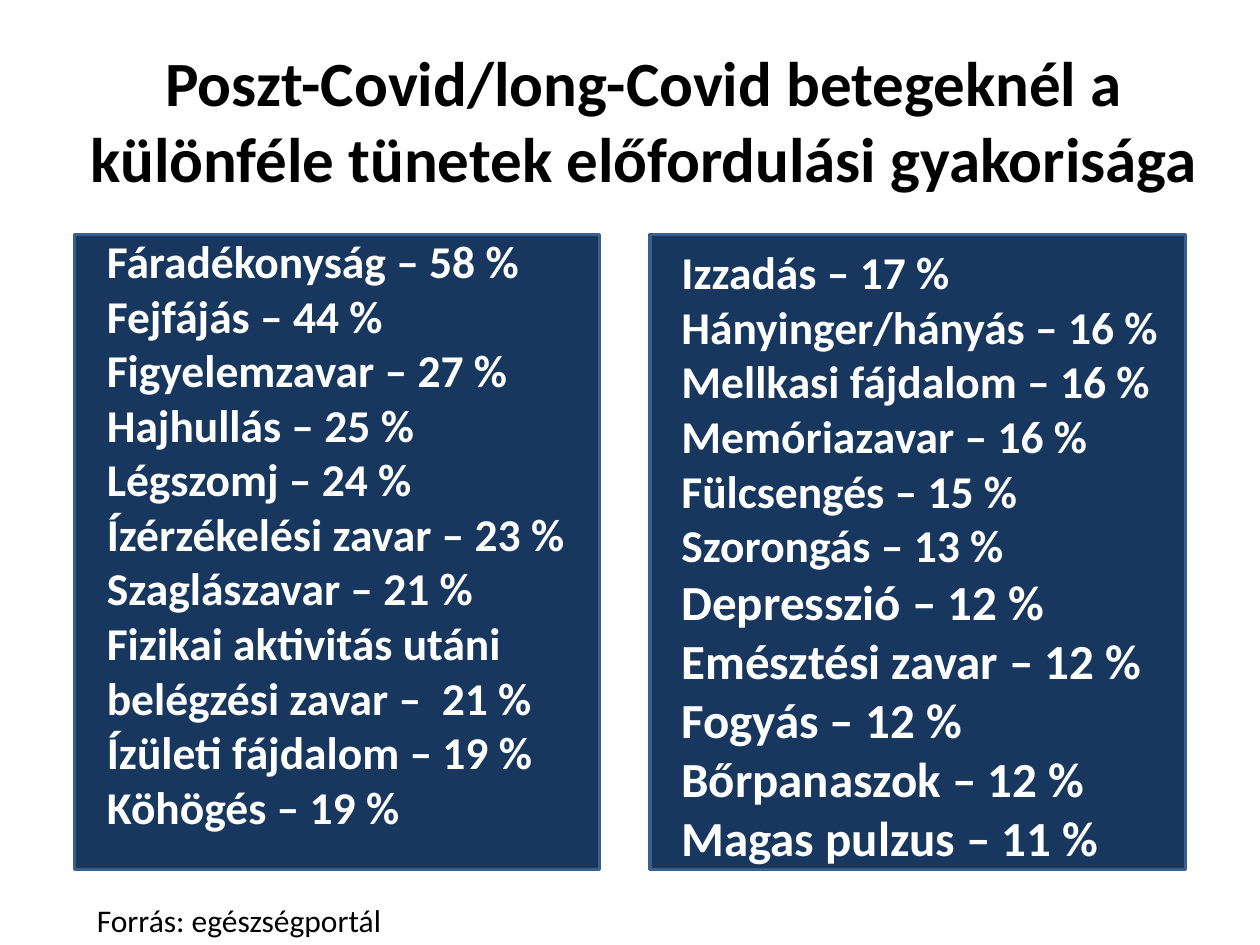
import pptx
import pptx.dml.color
import pptx.enum.shapes
import pptx.enum.text
import pptx.util

Inches = pptx.util.Inches
FONT = "Calibri"
NAVY, EDGE, WHITE, BLACK = "17375E", "3A5F8C", "FFFFFF", "000000"
PANEL_TOP, PANEL_HEIGHT = 1.86, 5.04

LEFT_SYMPTOMS = [
    ("Fáradékonyság – 58 %", 26),
    ("Fejfájás – 44 %", 26),
    ("Figyelemzavar – 27 %", 26),
    ("Hajhullás – 25 %", 26),
    ("Légszomj – 24 %", 26),
    ("Ízérzékelési zavar – 23 %", 26),
    ("Szaglászavar – 21 %", 26),
    ("Fizikai aktivitás utáni belégzési zavar –  21 %", 26),
    ("Ízületi fájdalom – 19 %", 26),
    ("Köhögés – 19 %", 26),
]
RIGHT_SYMPTOMS = [
    ("Izzadás – 17 %", 26),
    ("Hányinger/hányás – 16 %", 26),
    ("Mellkasi fájdalom – 16 %", 26),
    ("Memóriazavar – 16 %", 26),
    ("Fülcsengés – 15 %", 26),
    ("Szorongás – 13 %", 26),
    ("Depresszió – 12 %", 28),
    ("Emésztési zavar – 12 %", 28),
    ("Fogyás – 12 %", 28),
    ("Bőrpanaszok – 12 %", 28),
    ("Magas pulzus – 11 %", 28),
]


def rgb(value):
    return pptx.dml.color.RGBColor.from_string(value)


def add_panel(s, left, width):
    sp = s.shapes.add_shape(
        pptx.enum.shapes.MSO_SHAPE.RECTANGLE,
        Inches(left), Inches(PANEL_TOP), Inches(width), Inches(PANEL_HEIGHT))
    sp.shadow.inherit = False
    sp.fill.solid()
    sp.fill.fore_color.rgb = rgb(NAVY)
    sp.line.color.rgb = rgb(EDGE)
    sp.line.width = pptx.util.Pt(2)


def add_text(s, box, lines, color, bold=False, align="LEFT"):
    """Add a text box; lines are (text, size in points) pairs."""
    tf = s.shapes.add_textbox(*map(Inches, box)).text_frame
    tf.word_wrap = True
    tf.vertical_anchor = pptx.enum.text.MSO_ANCHOR.TOP
    for i, (text, size) in enumerate(lines):
        p = tf.add_paragraph() if i else tf.paragraphs[0]
        p.alignment = getattr(pptx.enum.text.PP_ALIGN, align)
        r = p.add_run()
        r.text = text
        formats = {"name": FONT, "size": pptx.util.Pt(size), "bold": bold}
        for name, value in formats.items():
            setattr(r.font, name, value)
        r.font.color.rgb = rgb(color)


def main():
    prs = pptx.Presentation()
    prs.slide_width, prs.slide_height = Inches(10), Inches(7.5)
    s = prs.slides.add_slide(prs.slide_layouts[6])

    # Title
    title = "Poszt-Covid/long-Covid betegeknél a különféle tünetek előfordulási gyakorisága"
    add_text(s, (0.5, 0.3, 9.22, 1.5), [(title, 36)], BLACK, True, "CENTER")

    # Symptom panels
    add_panel(s, 0.59, 4.17)
    add_text(s, (0.75, 1.8, 3.86, 5.08), LEFT_SYMPTOMS, WHITE, True)
    add_panel(s, 5.16, 4.25)
    add_text(s, (5.31, 1.89, 4.02, 5.08), RIGHT_SYMPTOMS, WHITE, True)

    # Source
    add_text(s, (0.67, 7.1, 3.15, 0.4), [("Forrás: egészségportál", 18)], BLACK)

    prs.save("out.pptx")


if __name__ == "__main__":
    main()
